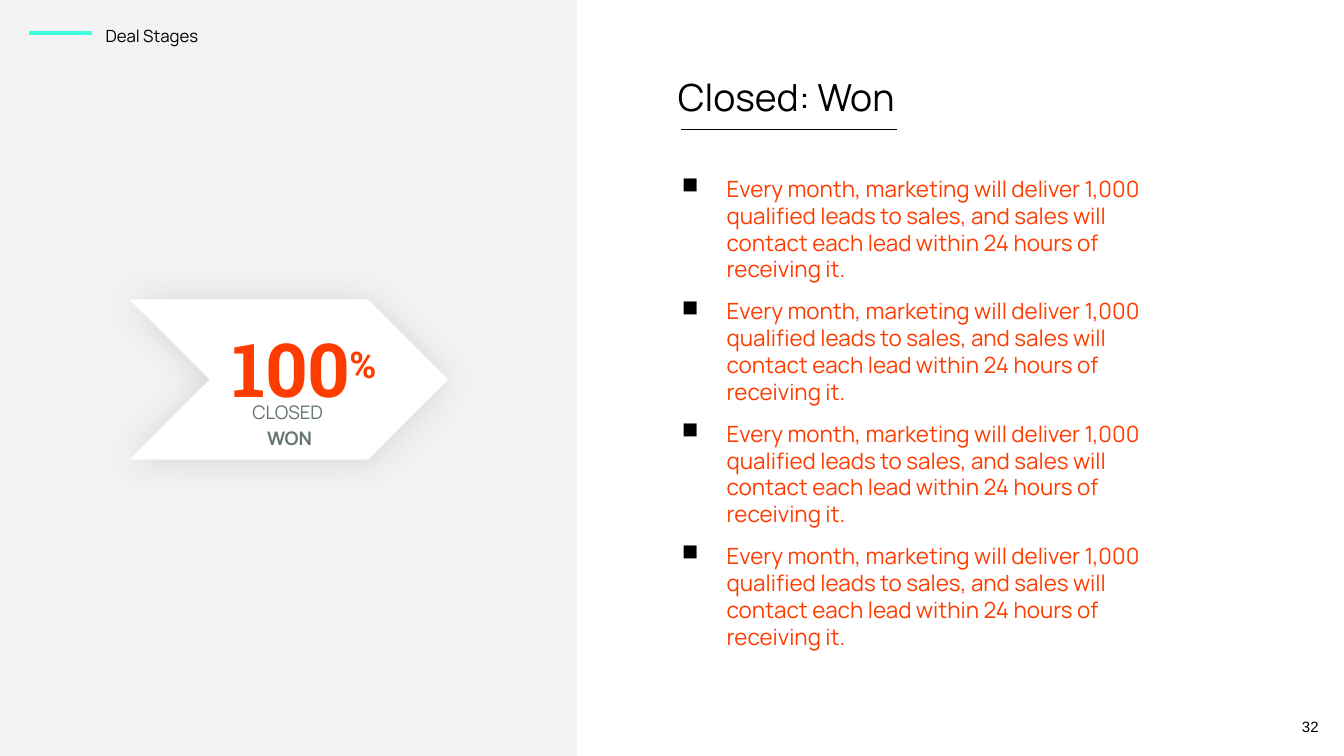
from lxml.etree import SubElement
from pptx import Presentation
from pptx.dml.color import RGBColor
from pptx.enum.shapes import MSO_CONNECTOR as Line, MSO_SHAPE as Shape
from pptx.enum.text import MSO_ANCHOR as Anchor, PP_ALIGN as Align
from pptx.oxml.ns import qn
from pptx.util import Pt

# Content
SECTION = "Deal Stages"
HEADING = "Closed: Won"
PROMISE = ("Every month, marketing will deliver 1,000 qualified leads to sales, "
           "and sales will contact each lead within 24 hours of receiving it.")
PROMISES = [PROMISE] * 4
PAGE = "32"

THEME = {
    "panel": "F3F3F3", "white": "FFFFFF", "black": "000000", "mint": "3FFFDC",
    "orange": "FF3C00", "slate": "657573", "shadow": "B7B7B7",
    "page": {"name": "Arial", "size": 8, "color": "black"},
    "section": {"name": "Manrope", "size": 9, "color": "black"},
    "heading": {"name": "Manrope", "size": 20, "color": "black"},
    "promise": {"name": "Manrope", "size": 12, "color": "orange"},
    "stage": {"name": "Manrope", "size": 10, "color": "slate"},
    "result": {"name": "Manrope", "size": 10, "color": "slate", "bold": True},
    "share": {"name": "Roboto Slab", "size": 40, "color": "orange", "bold": True},
    "percent": {"name": "Roboto Slab", "size": 34, "color": "orange", "bold": True},
}
INSET = 7.2
GAP = 8


def rgb(color):
    return RGBColor.from_string(THEME[color])


def add_run(paragraph, text, style):
    run = paragraph.add_run()
    run.text = text
    for key, value in THEME[style].items():
        if key == "color":
            run.font.color.rgb = rgb(value)
        else:
            setattr(run.font, key, Pt(value) if key == "size" else value)
    return run


def add_box(slide, left, top, width, height, anchor=Anchor.TOP, **paragraph_format):
    frame = slide.shapes.add_textbox(Pt(left), Pt(top), Pt(width), Pt(height)).text_frame
    settings = {"word_wrap": True, "vertical_anchor": anchor}
    settings.update({f"margin_{side}": Pt(INSET) for side in ("left", "top", "right", "bottom")})
    for key, value in settings.items():
        setattr(frame, key, value)
    for key, value in paragraph_format.items():
        setattr(frame.paragraphs[0], key, value)
    return frame


def add_shape(slide, kind, left, top, width, height, fill):
    shape = slide.shapes.add_shape(kind, Pt(left), Pt(top), Pt(width), Pt(height))
    shape.shadow.inherit = False
    shape.fill.solid()
    shape.fill.fore_color.rgb = rgb(fill)
    shape.line.fill.background()
    return shape


def add_rule(slide, left, right, y, color, weight):
    rule = slide.shapes.add_connector(Line.STRAIGHT, Pt(left), Pt(y), Pt(right), Pt(y))
    rule.line.color.rgb = rgb(color)
    rule.line.width = Pt(weight)
    SubElement(rule._element.spPr, qn("a:effectLst"))


def add_soft_shadow(shape):
    effects = shape._element.spPr.find(qn("a:effectLst"))
    shadow = SubElement(effects, qn("a:outerShdw"), blurRad=str(Pt(19.1)), dist=str(Pt(0.8)),
                        dir="5400000", algn="bl", rotWithShape="0")
    color = SubElement(shadow, qn("a:srgbClr"), val=THEME["shadow"])
    SubElement(color, qn("a:alpha"), val="50000")


def add_bullet(paragraph):
    properties = paragraph._p.get_or_add_pPr()
    properties.set("marL", str(Pt(36)))
    properties.set("indent", str(-Pt(24)))
    color = SubElement(properties, qn("a:buClr"))
    SubElement(color, qn("a:srgbClr"), val=THEME["black"])
    SubElement(properties, qn("a:buChar"), char="■")


deck = Presentation()
deck.slide_width, deck.slide_height = Pt(720), Pt(405)
slide = deck.slides.add_slide(deck.slide_layouts[6])

# Left panel, page number and section label
add_shape(slide, Shape.RECTANGLE, 0, 0, 309, 405, "panel")
page = add_box(slide, 670.3, 374, 43.2, 31, Anchor.MIDDLE, alignment=Align.RIGHT)
add_run(page.paragraphs[0], PAGE, "page")
section = add_box(slide, 49.5, 5.8, 290, 23, line_spacing=1.15)
add_run(section.paragraphs[0], SECTION, "section")
add_rule(slide, 15.5, 49.5, 17.8, "mint", 2.25)

# Bulleted promises
promises = add_box(slide, 346.2, 86.5, 290, 227.5)
for index, promise in enumerate(PROMISES):
    paragraph = promises.add_paragraph() if index else promises.paragraphs[0]
    add_bullet(paragraph)
    if index:
        paragraph.space_before = Pt(GAP)
    add_run(paragraph, promise, "promise")
paragraph.space_after = Pt(GAP)

# Heading with its underline
heading = add_box(slide, 356.1, 32.4, 280, 31)
add_run(heading.paragraphs[0], HEADING, "heading")
add_rule(slide, 365, 480.4, 69.5, "black", 0.75)

# Stage arrow
arrow = add_shape(slide, Shape.CHEVRON, 69.3, 160.4, 170.8, 85.9, "white")
arrow.adjustments[0] = 0.5
add_soft_shadow(arrow)

# Stage name and share
centred = {"alignment": Align.CENTER, "line_spacing": 1.15}
stage = add_box(slide, 93.6, 206, 123, 31, **centred).paragraphs[0]
add_run(stage, "CLOSED ", "stage")
stage.add_line_break()
add_run(stage, "WON", "result")
share = add_box(slide, 101.5, 158.4, 123, 48, **centred).paragraphs[0]
add_run(share, "100", "share")
percent = add_run(share, "%", "percent")
percent.font._element.set("baseline", "30000")

deck.save("out.pptx")
